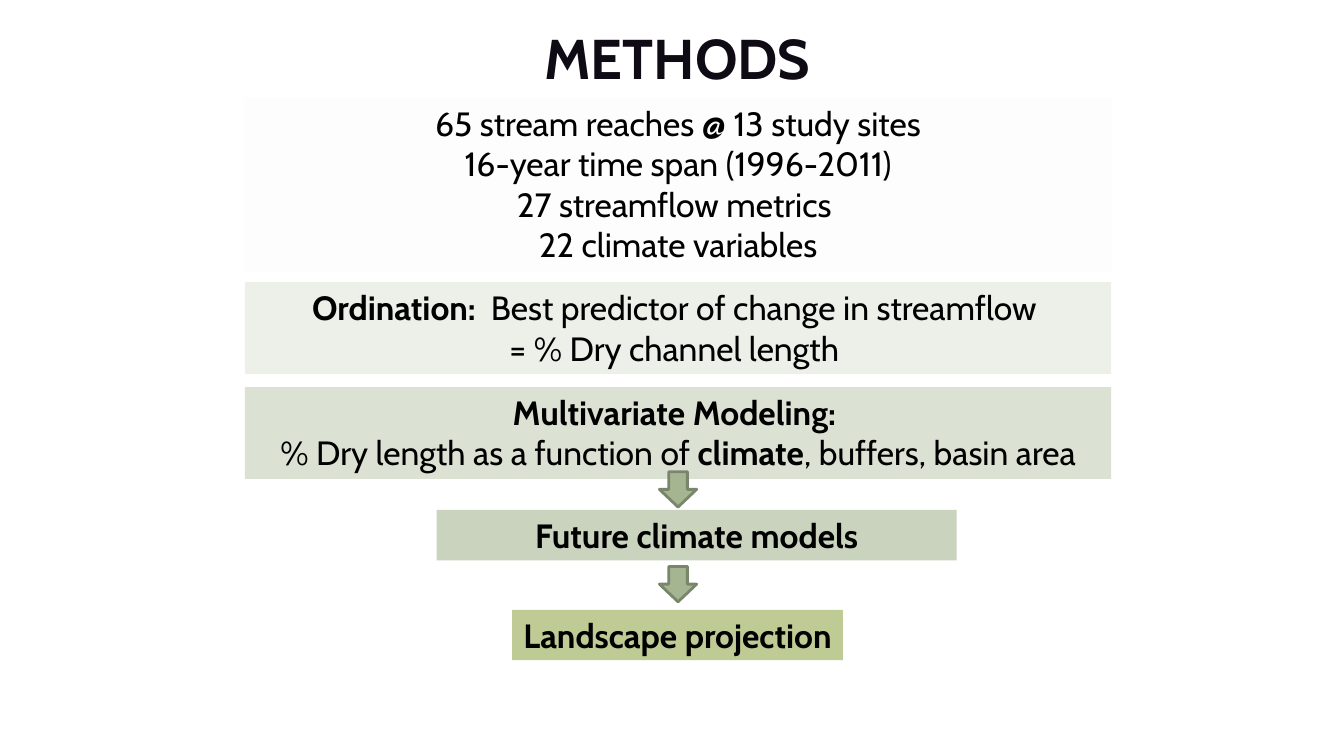
from dataclasses import dataclass

from lxml.etree import SubElement
from pptx import Presentation
from pptx.dml.color import RGBColor
from pptx.enum.shapes import MSO_SHAPE
from pptx.enum.text import MSO_ANCHOR, MSO_AUTO_SIZE, PP_ALIGN
from pptx.oxml.ns import qn
from pptx.util import Emu, Pt

EMU_PER_PX = 9144  # 100 px to the inch


@dataclass(frozen=True)
class Theme:
    font: str = "Cabin"
    title_size: int = 40
    body_size: int = 24
    title_ink: str = "0F0B15"
    ink: str = "000000"
    arrow_fill: str = "A5B592"
    arrow_line: str = "7A866C"
    arrow_line_width: int = 2


@dataclass(frozen=True)
class Span:
    text: str
    bold: bool = False


@dataclass(frozen=True)
class Panel:
    left: int
    top: int
    width: int
    height: int
    fill: str
    lines: tuple[tuple[Span, ...], ...]
    wrap: bool = True


THEME = Theme()
PAGE_WIDTH, PAGE_HEIGHT = 1333, 750
WIDE_LEFT, WIDE_WIDTH = 243, 859
ARROW_LEFT, ARROW_WIDTH, ARROW_HEIGHT = 654, 37, 35
ARROW_TOPS = (468, 562)

TITLE = Panel(522, 18, 300, 77, "", ((Span("METHODS", True),),))
STUDY = Panel(WIDE_LEFT, 97, WIDE_WIDTH, 172, "FDFDFD", (
    (Span("65 stream reaches @ 13 study sites"),),
    (Span("16-year time span (1996-2011)"),),
    (Span("27 streamflow metrics "),),
    (Span("22 climate variables"),),
))
STEPS = (
    Panel(WIDE_LEFT, 280, WIDE_WIDTH, 91, "EDF0E9", (
        (Span("Ordination:  ", True), Span("Best predictor of change in streamflow ")),
        (Span("= % Dry channel length "),),
    )),
    Panel(WIDE_LEFT, 384, WIDE_WIDTH, 91, "DBE1D3", (
        (Span("Multivariate Modeling: ", True),),
        (Span("% Dry length as a function of "), Span("climate", True),
         Span(", buffers, basin area")),
    )),
    Panel(433, 506, 516, 50, "C9D3BE", ((Span("Future climate models", True),),)),
    Panel(508, 605, 328, 50, "BECB95", ((Span("Landscape projection", True),),), wrap=False),
)


def px(length: int) -> Emu:
    return Emu(length * EMU_PER_PX)


def rgb(colour: str) -> RGBColor:
    return RGBColor.from_string(colour)


def fill_panel(box, panel: Panel, size: int, ink: str) -> None:
    """Place a text shape and give it the panel's fill and centred lines."""
    box.left, box.top = px(panel.left), px(panel.top)
    box.width, box.height = px(panel.width), px(panel.height)
    if panel.fill:
        box.fill.solid()
        box.fill.fore_color.rgb = rgb(panel.fill)
    frame = box.text_frame
    frame.word_wrap = panel.wrap
    frame.auto_size = MSO_AUTO_SIZE.NONE
    frame.vertical_anchor = MSO_ANCHOR.TOP
    for index, line in enumerate(panel.lines):
        para = frame.paragraphs[0] if index == 0 else frame.add_paragraph()
        para.alignment = PP_ALIGN.CENTER
        para.space_before = Pt(0)
        properties = para._p.get_or_add_pPr()
        properties.set("marL", "0")
        properties.set("indent", "0")
        SubElement(properties, qn("a:buNone"))
        para.font.name = THEME.font
        para.font.size = Pt(size)
        para.font.color.rgb = rgb(ink)
        for span in line:
            run = para.add_run()
            run.text = span.text
            run.font.bold = span.bold


def add_down_arrow(page, top: int) -> None:
    arrow = page.shapes.add_shape(MSO_SHAPE.DOWN_ARROW, px(ARROW_LEFT), px(top),
                                  px(ARROW_WIDTH), px(ARROW_HEIGHT))
    arrow.shadow.inherit = False
    arrow.fill.solid()
    arrow.fill.fore_color.rgb = rgb(THEME.arrow_fill)
    arrow.line.color.rgb = rgb(THEME.arrow_line)
    arrow.line.width = Pt(THEME.arrow_line_width)


def main() -> None:
    deck = Presentation()
    deck.slide_width, deck.slide_height = px(PAGE_WIDTH), px(PAGE_HEIGHT)
    page = deck.slides.add_slide(deck.slide_layouts.get_by_name("Title and Content"))
    fill_panel(page.shapes.title, TITLE, THEME.title_size, THEME.title_ink)
    fill_panel(page.placeholders[1], STUDY, THEME.body_size, THEME.ink)
    for step in STEPS:
        box = page.shapes.add_textbox(0, 0, 0, 0)
        fill_panel(box, step, THEME.body_size, THEME.ink)
    for top in ARROW_TOPS:
        add_down_arrow(page, top)
    deck.save("out.pptx")


if __name__ == "__main__":
    main()
